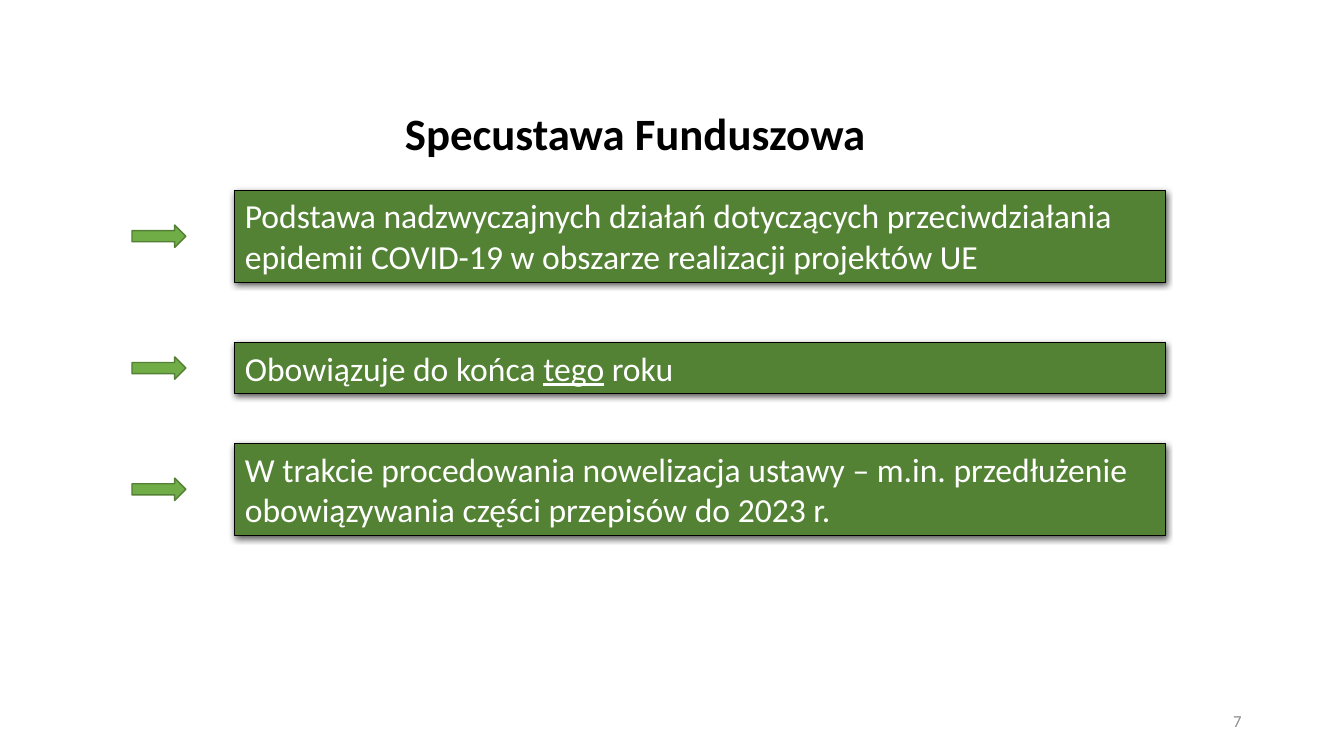
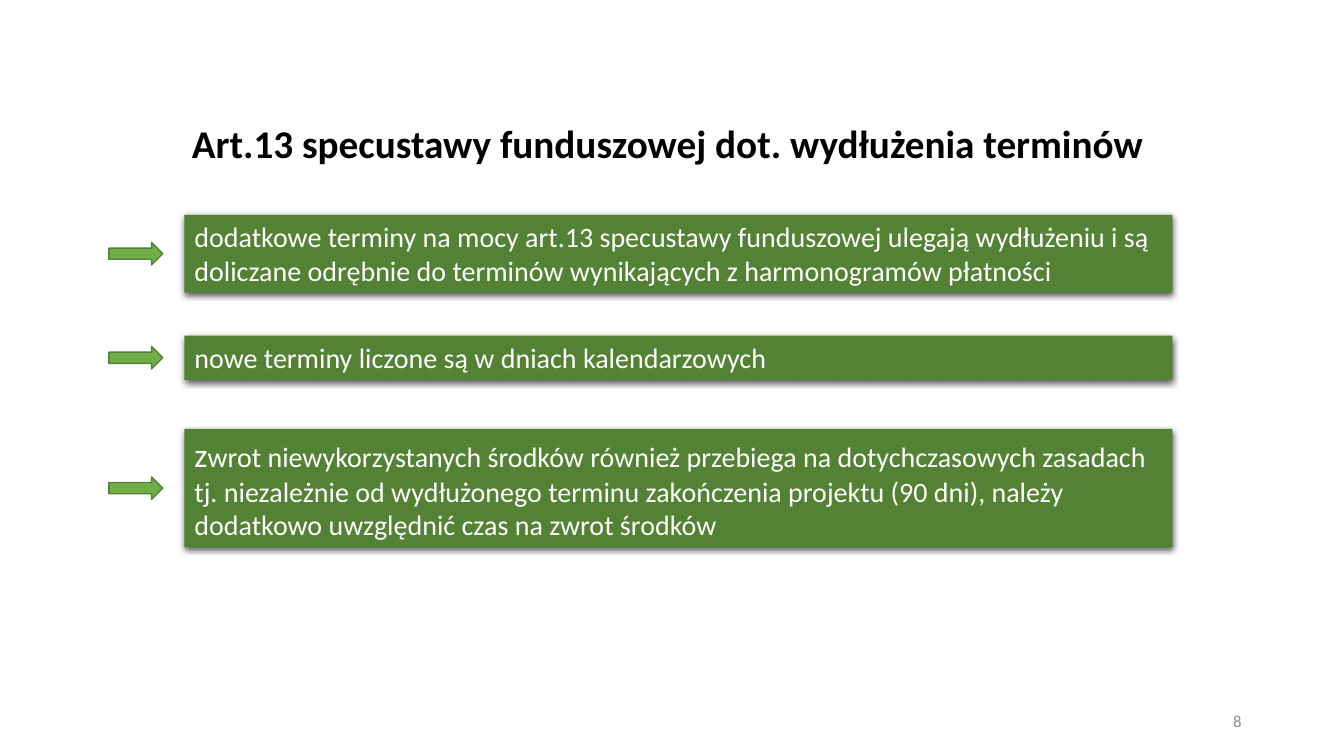
from dataclasses import dataclass

from lxml.etree import SubElement
from pptx import Presentation
from pptx.dml.color import RGBColor
from pptx.enum.shapes import MSO_SHAPE
from pptx.enum.text import MSO_ANCHOR, MSO_AUTO_SIZE, PP_ALIGN
from pptx.oxml.ns import qn
from pptx.util import Pt

# Shared style
FONT = "Calibri"
BLACK = RGBColor(0x00, 0x00, 0x00)
WHITE = RGBColor(0xFF, 0xFF, 0xFF)
GREY = RGBColor(0x8C, 0x8C, 0x8C)
BOX_GREEN = RGBColor(0x54, 0x82, 0x35)
ARROW_GREEN = RGBColor(0x70, 0xAD, 0x47)
ARROW_EDGE = RGBColor(0x53, 0x80, 0x35)
ARROW_WIDTH, ARROW_HEIGHT = 38.5, 16


@dataclass
class Span:
    text: str
    size: float | None = None
    underline: bool = False


@dataclass
class Statement:
    top: float
    height: float
    spans: list[Span]


@dataclass
class Content:
    number: int
    title: str
    title_area: tuple[float, float, float, float]
    title_size: float
    title_align: PP_ALIGN
    title_wrap: bool
    box_left: float
    box_width: float
    arrow_left: float
    text_size: float
    outlined: bool
    statements: list[Statement]


CONTENTS = [
    Content(
        7, "Specustawa Funduszowa", (282.2, 72, 346.3, 46), 32, PP_ALIGN.LEFT, False,
        box_left=167.8, box_width=664.6, arrow_left=94.3, text_size=24, outlined=True,
        statements=[
            Statement(136, 65.5, [Span(
                "Podstawa nadzwyczajnych działań dotyczących przeciwdziałania "
                "epidemii COVID-19 w obszarze realizacji projektów UE")]),
            Statement(244.8, 36.3, [
                Span("Obowiązuje do końca "), Span("tego", underline=True), Span(" roku")]),
            Statement(316.8, 65.5, [Span(
                "W trakcie procedowania nowelizacja ustawy – m.in. przedłużenie "
                "obowiązywania części przepisów do 2023 r.")]),
        ],
    ),
    Content(
        8, "Art.13 specustawy funduszowej dot. wydłużenia terminów",
        (101.5, 81.4, 750.2, 41), 28, PP_ALIGN.CENTER, True,
        box_left=131.8, box_width=705.6, arrow_left=77.8, text_size=20, outlined=False,
        statements=[
            Statement(153.4, 55.7, [Span(
                "dodatkowe terminy na mocy art.13 specustawy funduszowej ulegają wydłużeniu i są "
                "doliczane odrębnie do terminów wynikających z harmonogramów płatności")]),
            Statement(239.8, 31.5, [Span("nowe terminy liczone są w dniach kalendarzowych")]),
            Statement(306.3, 84.8, [Span("z", size=24), Span(
                "wrot niewykorzystanych środków również przebiega na dotychczasowych zasadach "
                "tj. niezależnie od wydłużonego terminu zakończenia projektu (90 dni), należy "
                "dodatkowo uwzględnić czas na zwrot środków")]),
        ],
    ),
]


def write_text(shape, spans: list[Span], *, size: float, color: RGBColor,
               bold: bool = False, align: PP_ALIGN = PP_ALIGN.LEFT,
               anchor: MSO_ANCHOR = MSO_ANCHOR.TOP, wrap: bool = True,
               grow: bool = True) -> None:
    frame = shape.text_frame
    frame.word_wrap = wrap
    frame.vertical_anchor = anchor
    frame.auto_size = MSO_AUTO_SIZE.SHAPE_TO_FIT_TEXT if grow else MSO_AUTO_SIZE.NONE
    para = frame.paragraphs[0]
    para.alignment = align
    for span in spans:
        run = para.add_run()
        run.text = span.text
        font = run.font
        font.name, font.size, font.bold = FONT, Pt(span.size or size), bold
        font.underline = span.underline
        font.color.rgb = color


def add_text_box(page, area: tuple[float, float, float, float], text: str, **style) -> None:
    box = page.shapes.add_textbox(*map(Pt, area))
    write_text(box, [Span(text)], **style)


def add_filled_shape(page, kind: MSO_SHAPE, area: tuple[float, float, float, float],
                     fill: RGBColor, edge: RGBColor | None, edge_width: float):
    shape = page.shapes.add_shape(kind, *map(Pt, area))
    shape.shadow.inherit = False
    shape.fill.solid()
    shape.fill.fore_color.rgb = fill
    if edge is None:
        shape.line.fill.background()
    else:
        shape.line.color.rgb = edge
        shape.line.width = Pt(edge_width)
    return shape


def add_soft_shadow(shape) -> None:
    effects = shape.element.spPr.find(qn("a:effectLst"))
    shadow = SubElement(effects, qn("a:outerShdw"), blurRad=str(Pt(4.5)),
                        dist=str(Pt(1.5)), dir="5400000", algn="ctr", rotWithShape="0")
    color = SubElement(shadow, qn("a:srgbClr"), val=str(BLACK))
    SubElement(color, qn("a:alpha"), val="63000")


def add_statement(page, content: Content, statement: Statement) -> None:
    box = add_filled_shape(
        page, MSO_SHAPE.RECTANGLE,
        (content.box_left, statement.top, content.box_width, statement.height),
        BOX_GREEN, BLACK if content.outlined else None, 0.75)
    add_soft_shadow(box)
    write_text(box, statement.spans, size=content.text_size, color=WHITE)
    # Arrow centred on its box
    arrow_top = statement.top + (statement.height - ARROW_HEIGHT) / 2
    add_filled_shape(page, MSO_SHAPE.RIGHT_ARROW,
                     (content.arrow_left, arrow_top, ARROW_WIDTH, ARROW_HEIGHT),
                     ARROW_GREEN, ARROW_EDGE, 1)


def add_page(deck, content: Content) -> None:
    page = deck.slides.add_slide(deck.slide_layouts[6])
    # Title
    add_text_box(page, content.title_area, content.title, size=content.title_size,
                 color=BLACK, bold=True, align=content.title_align, wrap=content.title_wrap)
    # Statements with arrows
    for statement in content.statements:
        add_statement(page, content, statement)
    # Page number
    add_text_box(page, (678, 500.5, 216, 28.75), str(content.number), size=12, color=GREY,
                 align=PP_ALIGN.RIGHT, anchor=MSO_ANCHOR.MIDDLE, grow=False)


def main() -> None:
    deck = Presentation()
    deck.slide_width, deck.slide_height = Pt(960), Pt(540)
    for content in CONTENTS:
        add_page(deck, content)
    deck.save("out.pptx")


if __name__ == "__main__":
    main()
